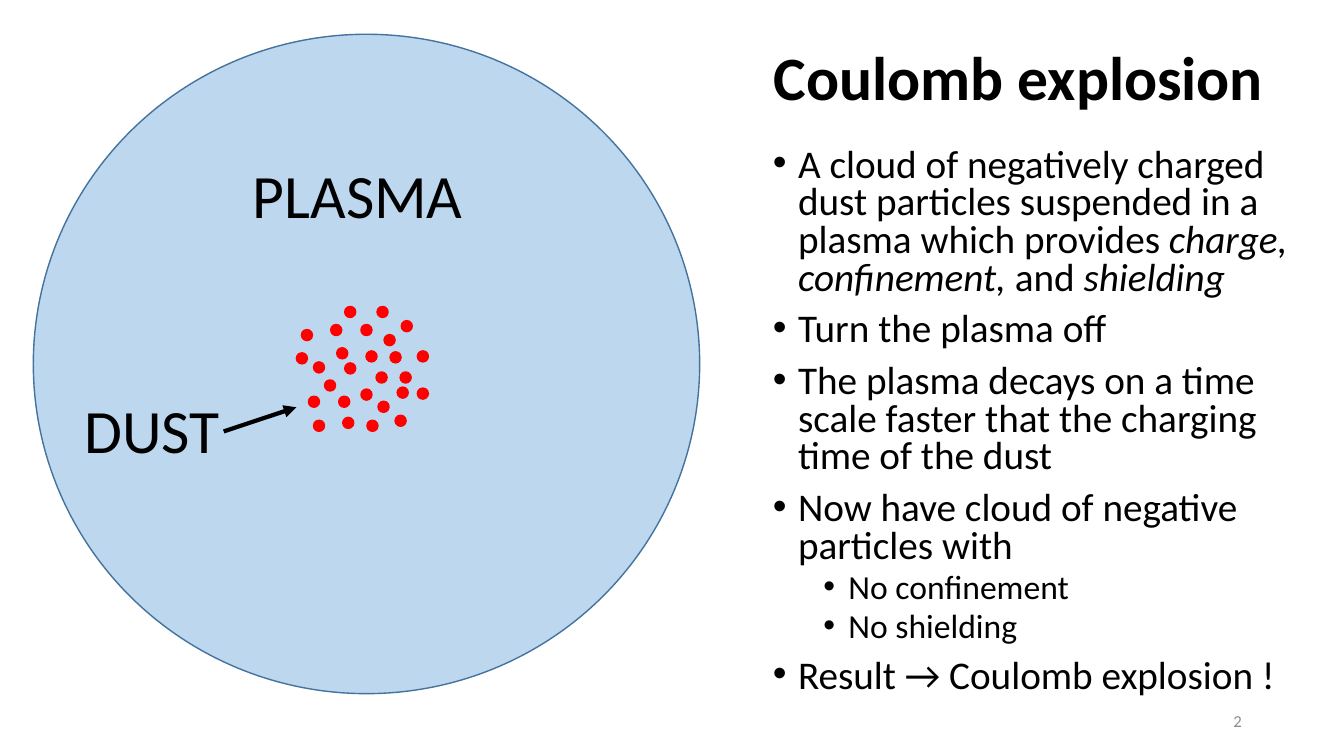
from dataclasses import dataclass

import pptx
import pptx.dml.color
import pptx.enum.shapes
import pptx.enum.text
import pptx.oxml
import pptx.oxml.ns
import pptx.util
from pptx.shapes.autoshape import Shape
from pptx.slide import Slide
from pptx.text.text import TextFrame, _Paragraph

Pt = pptx.util.Pt
ALIGN = pptx.enum.text.PP_ALIGN
ANCHOR = pptx.enum.text.MSO_ANCHOR
FIT = pptx.enum.text.MSO_AUTO_SIZE


@dataclass(frozen=True)
class Theme:
    font: str = "Calibri"
    text: str = "000000"
    muted: str = "8C8C8C"
    plasma: str = "BDD7EE"
    plasma_edge: str = "43739E"
    dust: str = "FF0000"
    heading: float = 44
    body: float = 28
    sub_body: float = 24
    page_number: float = 12


@dataclass(frozen=True)
class Box:
    left: float
    top: float
    width: float
    height: float


@dataclass(frozen=True)
class Span:
    text: str
    italic: bool = False


@dataclass(frozen=True)
class Bullet:
    spans: tuple[Span, ...]
    level: int = 0


THEME = Theme()
DUST_SIZE = 7.9
DUST_CORNERS = (
    (215.3, 235.4), (211.7, 252), (240.5, 248.4), (246.2, 259.2), (257.8, 277.9),
    (246.2, 218.9), (282.2, 296.6), (257.8, 231.8), (274.3, 239), (278.6, 251.3),
    (285.8, 265.7), (298.1, 277.2), (270, 286.6), (241.9, 283), (262.1, 300.2),
    (223.9, 300.2), (223.9, 258.5), (236.2, 231.8), (231.8, 271.4), (268.6, 265.7),
    (261.4, 250.6), (283.7, 276.5), (269.3, 218.9), (244.8, 298.1), (220.3, 283),
    (286.6, 229), (298.1, 250.6),
)
BULLETS = (
    Bullet((
        Span("A cloud of negatively charged dust particles suspended in a plasma which provides "),
        Span("charge, confinement, ", italic=True),
        Span("and"),
        Span(" shielding", italic=True),
    )),
    Bullet((Span("Turn the plasma off"),)),
    Bullet((Span("The plasma decays on a time scale faster that the charging time of the dust"),)),
    Bullet((Span("Now have cloud of negative particles with"),)),
    Bullet((Span("No confinement"),), level=1),
    Bullet((Span("No shielding"),), level=1),
    Bullet((Span("Result → Coulomb explosion !"),)),
)


def rgb(value: str) -> pptx.dml.color.RGBColor:
    return pptx.dml.color.RGBColor.from_string(value)


def place(shape: Shape, box: Box) -> None:
    shape.left, shape.top = Pt(box.left), Pt(box.top)
    shape.width, shape.height = Pt(box.width), Pt(box.height)


def add_text_box(page: Slide, box: Box) -> TextFrame:
    shape = page.shapes.add_textbox(Pt(box.left), Pt(box.top), Pt(box.width), Pt(box.height))
    shape.text_frame.word_wrap = True
    return shape.text_frame


def add_span(para: _Paragraph, text: str, *, size: float, color: str = THEME.text,
             bold: bool = False, italic: bool = False) -> None:
    span = para.add_run()
    span.text = text
    span.font.name = THEME.font
    span.font.size = Pt(size)
    span.font.bold = bold
    span.font.italic = italic
    span.font.color.rgb = rgb(color)


def add_ellipse(page: Slide, box: Box, *, fill: str, line: str) -> None:
    shape = page.shapes.add_shape(
        pptx.enum.shapes.MSO_SHAPE.OVAL,
        Pt(box.left), Pt(box.top), Pt(box.width), Pt(box.height))
    shape.shadow.inherit = False
    shape.fill.solid()
    shape.fill.fore_color.rgb = rgb(fill)
    shape.line.color.rgb = rgb(line)
    shape.line.width = Pt(1)


def add_title(page: Slide) -> None:
    title = page.shapes.title
    place(title, Box(516.2, 24.5, 393.8, 66.2))
    frame = title.text_frame
    frame.word_wrap = True
    frame.auto_size = FIT.NONE
    frame.vertical_anchor = ANCHOR.MIDDLE
    para = frame.paragraphs[0]
    para.alignment = ALIGN.RIGHT
    para.line_spacing = 0.9
    add_span(para, "Coulomb explosion", size=THEME.heading, bold=True)


def add_bullets(page: Slide) -> None:
    frame = add_text_box(page, Box(545, 102.2, 415, 404.6))
    for index, bullet in enumerate(BULLETS):
        para = frame.add_paragraph() if index else frame.paragraphs[0]
        para.level = bullet.level
        para.line_spacing = 0.8
        para.space_before = Pt(5 if bullet.level else 10)
        properties = para._p.get_or_add_pPr()
        properties.set("marL", str(Pt(18 + 36 * bullet.level)))
        properties.set("indent", str(Pt(-18)))
        for tag, name, value in (("a:buFont", "typeface", "Arial"), ("a:buChar", "char", "•")):
            mark = pptx.oxml.parse_xml(f"<{tag} {pptx.oxml.ns.nsdecls('a')}/>")
            mark.set(name, value)
            properties.append(mark)
        size = THEME.sub_body if bullet.level else THEME.body
        for span in bullet.spans:
            add_span(para, span.text, size=size, italic=span.italic)


def add_page_number(page: Slide) -> None:
    frame = add_text_box(page, Box(678.2, 500.4, 216, 28.8))
    frame.vertical_anchor = ANCHOR.MIDDLE
    para = frame.paragraphs[0]
    para.alignment = ALIGN.RIGHT
    add_span(para, "2", size=THEME.page_number, color=THEME.muted)


def add_label(page: Slide, text: str, box: Box) -> None:
    frame = add_text_box(page, box)
    frame.auto_size = FIT.SHAPE_TO_FIT_TEXT
    add_span(frame.paragraphs[0], text, size=THEME.heading)


def add_dust_arrow(page: Slide) -> None:
    arrow = page.shapes.add_connector(
        pptx.enum.shapes.MSO_CONNECTOR.STRAIGHT, Pt(159.8), Pt(308.2), Pt(211.7), Pt(290.9))
    arrow.line.color.rgb = rgb(THEME.text)
    arrow.line.width = Pt(3)
    namespace = pptx.oxml.ns.nsdecls("a")
    arrow.line._get_or_add_ln().append(
        pptx.oxml.parse_xml(f'<a:tailEnd {namespace} type="triangle"/>'))
    arrow._element.spPr.append(pptx.oxml.parse_xml(f"<a:effectLst {namespace}/>"))


def main() -> None:
    deck = pptx.Presentation()
    deck.slide_width, deck.slide_height = Pt(960), Pt(540)
    page = deck.slides.add_slide(deck.slide_layouts.get_by_name("Title Only"))
    add_ellipse(page, Box(23.8, 24.5, 476, 471), fill=THEME.plasma, line=THEME.plasma_edge)
    add_title(page)
    add_page_number(page)
    add_bullets(page)
    for left, top in DUST_CORNERS:
        add_ellipse(page, Box(left, top, DUST_SIZE, DUST_SIZE), fill=THEME.dust, line=THEME.dust)
    add_label(page, "PLASMA", Box(173.5, 108.7, 184.3, 60.5))
    add_label(page, "DUST", Box(53.3, 276.5, 127.4, 60.5))
    add_dust_arrow(page)
    deck.save("out.pptx")


if __name__ == "__main__":
    main()
